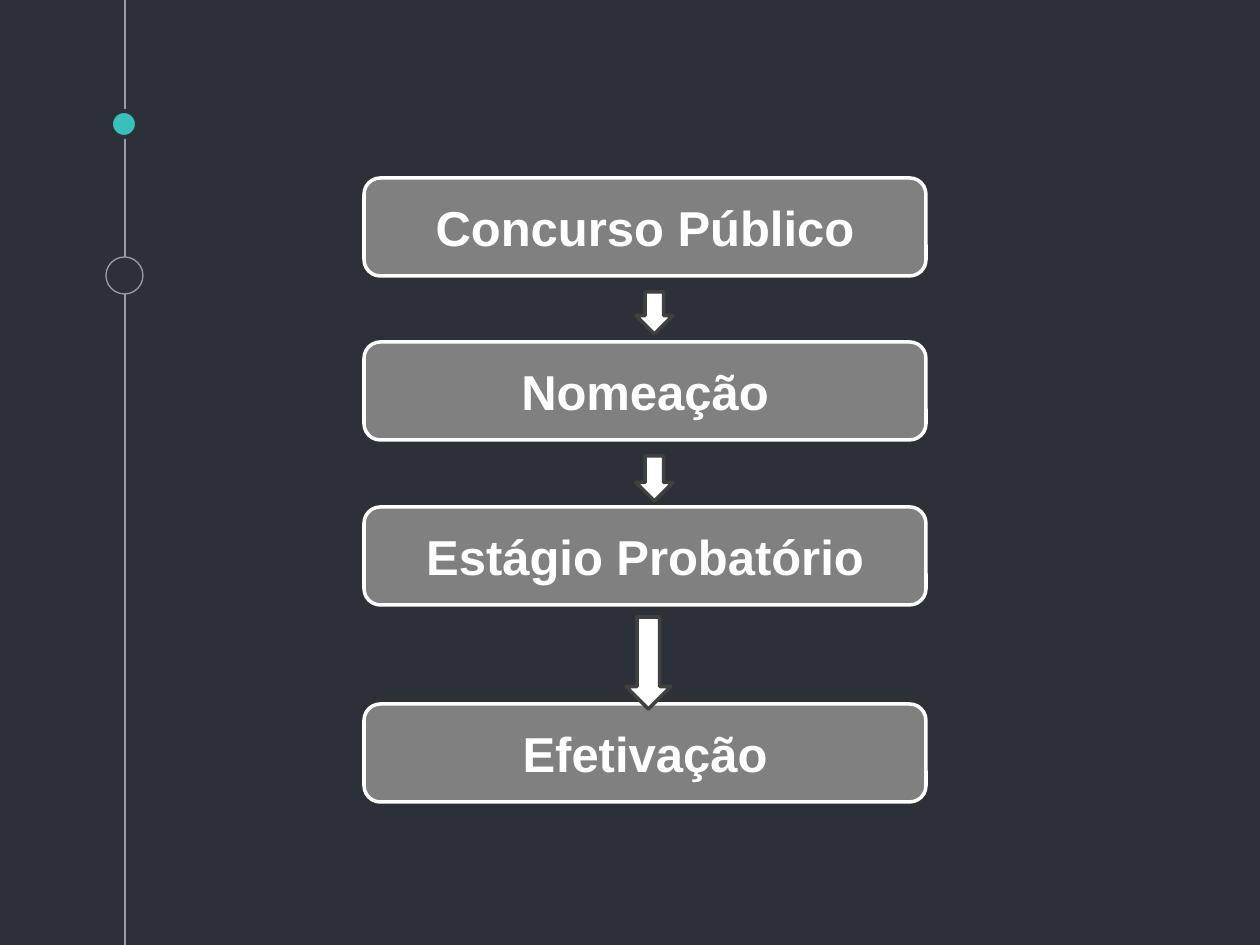
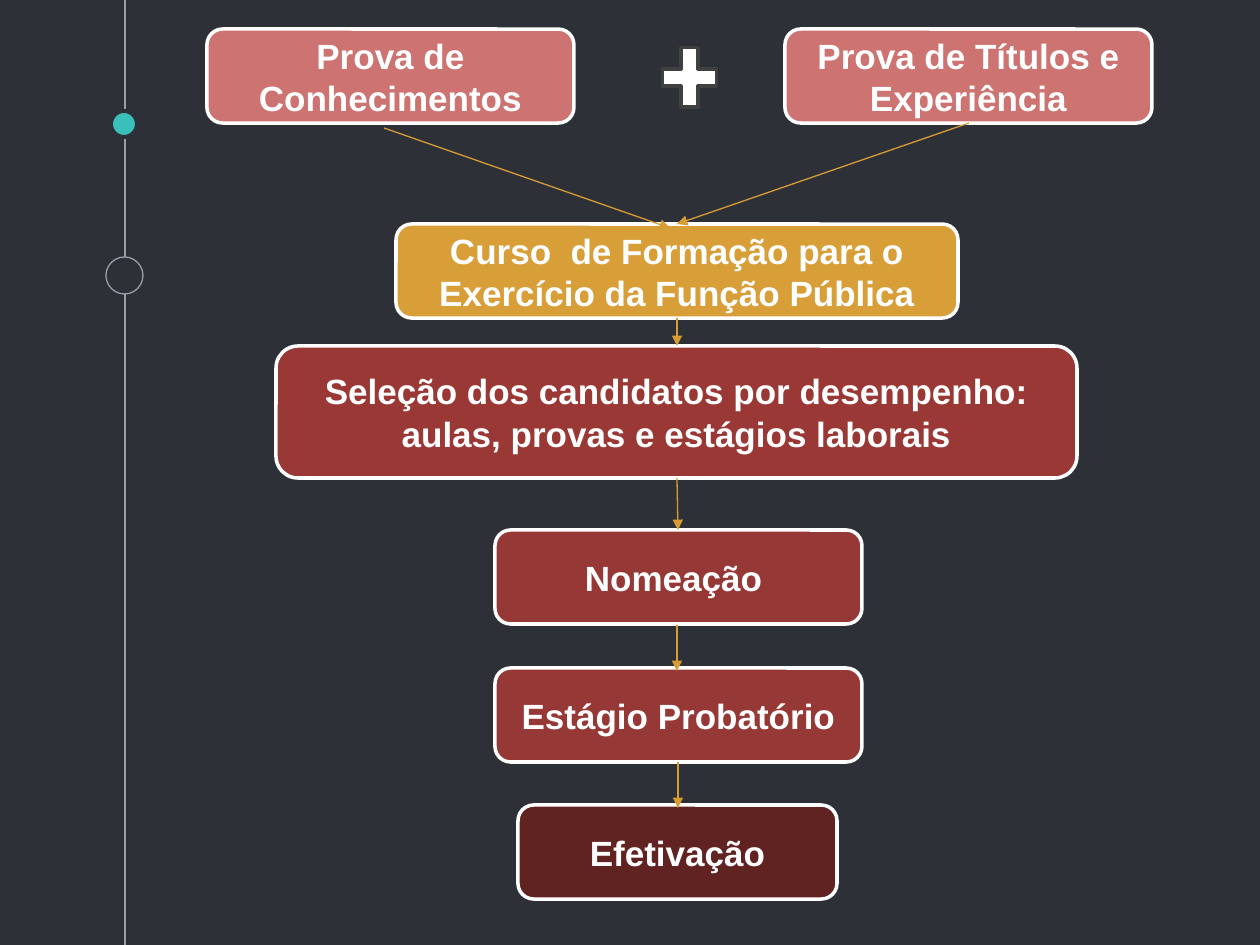
from typing import NamedTuple

from lxml import etree
from pptx import Presentation
from pptx.dml.color import RGBColor
from pptx.enum.shapes import MSO_CONNECTOR, MSO_SHAPE
from pptx.enum.text import MSO_ANCHOR, PP_ALIGN
from pptx.oxml.ns import qn
from pptx.util import Pt

EMU_PER_PX = 914400 / 126
SLIDE_W, SLIDE_H = 1260, 945

ROUNDED = MSO_SHAPE.ROUNDED_RECTANGLE
DOWN_ARROW = MSO_SHAPE.DOWN_ARROW
PLUS = MSO_SHAPE.MATH_PLUS
ELLIPSE = MSO_SHAPE.OVAL
STRAIGHT = MSO_CONNECTOR.STRAIGHT
CENTER = PP_ALIGN.CENTER
MIDDLE = MSO_ANCHOR.MIDDLE

FONT = "Arial"
NIGHT, SPINE, TEAL = "2E3037", "999FA9", "39C0BA"
WHITE, GRAY, CHARCOAL = "FFFFFF", "808080", "404040"
ROSE, GOLD, BRICK, RUST, WINE = "CD7371", "D89F39", "9A3836", "963836", "602322"
ARROW_GOLD = "D79D34"


class Box(NamedTuple):
    left: int
    top: int
    width: int
    height: int


class Step(NamedTuple):
    label: str
    box: Box
    fill: str


class Link(NamedTuple):
    x1: int
    y1: int
    x2: int
    y2: int


# Current procedure: four equal boxes in one column
CURRENT_STEPS = [
    Step(label, Box(364, top, 562, 98), GRAY)
    for label, top in [
        ("Concurso Público", 178),
        ("Nomeação", 342),
        ("Estágio Probatório", 507),
        ("Efetivação", 704),
    ]
]
CURRENT_ARROWS = [Box(636, 292, 37, 42), Box(636, 456, 37, 45), Box(626, 617, 45, 92)]

# Proposed procedure: two exams lead to one column of steps
PROPOSED_STEPS = [
    Step("Curso  de Formação para o Exercício da Função Pública",
         Box(396, 224, 562, 94), GOLD),
    Step("Seleção dos candidatos por desempenho: aulas, provas e estágios laborais",
         Box(276, 346, 801, 132), BRICK),
    Step("Efetivação", Box(518, 805, 319, 94), WINE),
    Step("Prova de Conhecimentos", Box(207, 29, 367, 94), ROSE),
    Step("Prova de Títulos e Experiência", Box(785, 29, 367, 94), ROSE),
    Step("Estágio Probatório", Box(495, 668, 367, 94), RUST),
    Step("Nomeação ", Box(495, 530, 367, 94), RUST),
]
EXAM_PLUS = Box(653, 37, 73, 81)
PROPOSED_LINKS = [
    Link(384, 128, 670, 228),
    Link(969, 123, 677, 224),
    Link(677, 318, 677, 346),
    Link(677, 478, 678, 530),
    Link(677, 625, 677, 671),
    Link(678, 762, 678, 808),
]


def px(length: int) -> int:
    return round(length * EMU_PER_PX)


def color(hex_code: str) -> RGBColor:
    return RGBColor.from_string(hex_code)


def add_figure(slide, kind, box: Box, *, fill: str, line: str, weight: float = 2):
    figure = slide.shapes.add_shape(kind, *map(px, box))
    figure.shadow.inherit = False
    figure.fill.solid()
    figure.fill.fore_color.rgb = color(fill)
    figure.line.color.rgb = color(line)
    figure.line.width = Pt(weight)
    return figure


def write(shape, text: str, *, size: int, ink: str = WHITE, bold: bool = True) -> None:
    frame = shape.text_frame
    frame.word_wrap = True
    frame.vertical_anchor = MIDDLE
    paragraph = frame.paragraphs[0]
    paragraph.alignment = CENTER
    run = paragraph.add_run()
    run.text = text
    run.font.name = FONT
    run.font.size = Pt(size)
    run.font.bold = bold
    run.font.color.rgb = color(ink)


def add_line(slide, link: Link, *, ink: str, arrow: bool = False):
    connector = slide.shapes.add_connector(STRAIGHT, *map(px, link))
    connector.line.color.rgb = color(ink)
    connector.line.width = Pt(0.75)
    if arrow:
        etree.SubElement(connector.line._get_or_add_ln(), qn("a:tailEnd"), type="triangle")
    etree.SubElement(connector.element.spPr, qn("a:effectLst"))
    return connector


def add_steps(slide, steps: list[Step], size: int) -> None:
    for step in steps:
        shape = add_figure(slide, ROUNDED, step.box, fill=step.fill, line=WHITE)
        write(shape, step.label, size=size)


def decorate_layout(layout, slide) -> None:
    """Set the shared background and move the side spine onto the layout."""
    layout.background.fill.solid()
    layout.background.fill.fore_color.rgb = color(NIGHT)
    for placeholder in list(layout.placeholders):
        layout.shapes.element.remove(placeholder.element)
    spine_parts = [
        add_line(slide, Link(125, 0, 125, SLIDE_H), ink=SPINE),
        add_figure(slide, ELLIPSE, Box(111, 111, 26, 26), fill=TEAL, line=NIGHT, weight=2.25),
        add_figure(slide, ELLIPSE, Box(106, 257, 37, 37), fill=NIGHT, line=SPINE, weight=0.75),
    ]
    for part in spine_parts:
        layout.shapes.element.append(part.element)


def build_current(slide) -> None:
    add_steps(slide, CURRENT_STEPS, size=28)
    for arrow in CURRENT_ARROWS:
        add_figure(slide, DOWN_ARROW, arrow, fill=WHITE, line=CHARCOAL)


def build_proposed(slide) -> None:
    add_steps(slide, PROPOSED_STEPS, size=20)
    add_figure(slide, PLUS, EXAM_PLUS, fill=WHITE, line=CHARCOAL)
    for link in PROPOSED_LINKS:
        add_line(slide, link, ink=ARROW_GOLD, arrow=True)


def main() -> None:
    deck = Presentation()
    deck.slide_width, deck.slide_height = px(SLIDE_W), px(SLIDE_H)
    blank = deck.slide_layouts[6]
    current = deck.slides.add_slide(blank)
    proposed = deck.slides.add_slide(blank)
    decorate_layout(blank, current)
    build_current(current)
    build_proposed(proposed)
    deck.save("out.pptx")


if __name__ == "__main__":
    main()
